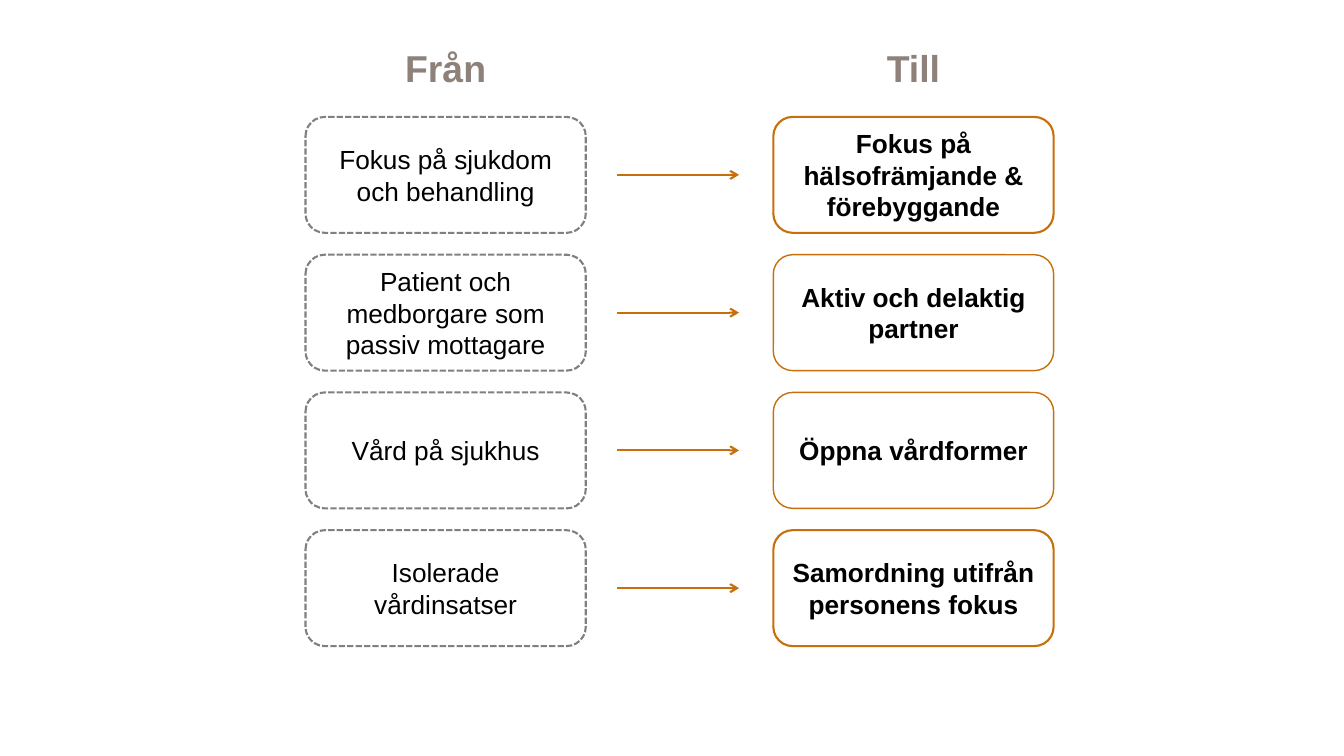
from lxml.etree import SubElement as Sub
from pptx import Presentation
from pptx.dml.color import RGBColor as Rgb
from pptx.enum.dml import MSO_LINE as Dash
from pptx.enum.shapes import MSO_CONNECTOR as Link, MSO_SHAPE as Form
from pptx.enum.text import MSO_ANCHOR as Anchor, PP_ALIGN as Align
from pptx.oxml.ns import qn
from pptx.util import Inches as In, Pt

HUES = {"text": "000000", "fill": "FFFFFF", "from": "808080",
        "to": "C76F0B", "head": "8D8179"}
WIDE, HIGH = 2.78, 1.15
TOP, STEP = 1.16, 4.1 / 3
LEFT, RIGHT = 3.03, 7.67
GAP = 0.31
HEAD_TOP, HEAD_WIDE, HEAD_HIGH = 0.4, 1.72, 0.55

ROWS = [
    ("Fokus på sjukdom och behandling",
     "Fokus på hälsofrämjande & förebyggande", 1.5),
    ("Patient och medborgare som passiv mottagare",
     "Aktiv och delaktig partner", 1),
    ("Vård på sjukhus", "Öppna vårdformer", 1),
    ("Isolerade vårdinsatser", "Samordning utifrån personens fokus", 1.5),
]


def hue(name):
    """Return the named colour."""
    return Rgb.from_string(HUES[name])


def write(shape, text, size, color, bold):
    """Put one centred paragraph in a shape."""
    frame = shape.text_frame
    frame.word_wrap = True
    para = frame.paragraphs[0]
    para.text = text
    para.alignment = Align.CENTER
    font = para.font
    font.name, font.size, font.bold = "Arial", Pt(size), bold
    font.color.rgb = hue(color)


def add_head(slide, left, text):
    """Centre a heading over the column that starts at left."""
    x = left + (WIDE - HEAD_WIDE) / 2
    box = slide.shapes.add_textbox(
        In(x), In(HEAD_TOP), In(HEAD_WIDE), In(HEAD_HIGH))
    write(box, text, 26.7, "head", True)


def add_card(slide, left, top, text, color, width, bold=False, dash=None):
    """Draw one rounded card with its text."""
    card = slide.shapes.add_shape(
        Form.ROUNDED_RECTANGLE, In(left), In(top), In(WIDE), In(HIGH))
    card.shadow.inherit = False
    card.fill.solid()
    card.fill.fore_color.rgb = hue("fill")
    card.line.color.rgb = hue(color)
    card.line.width = Pt(width)
    if dash:
        card.line.dash_style = dash
    frame = card.text_frame
    frame.vertical_anchor = Anchor.MIDDLE
    frame.margin_left = frame.margin_right = In(0.13)
    frame.margin_top = frame.margin_bottom = In(0.07)
    write(card, text, 18.7, "text", bold)


def add_arrow(slide, start, end, y):
    """Draw a level arrow from start to end."""
    arrow = slide.shapes.add_connector(
        Link.STRAIGHT, In(start), In(y), In(end), In(y))
    arrow.line.color.rgb = hue("to")
    arrow.line.width = Pt(1.5)
    Sub(arrow.line._get_or_add_ln(), qn("a:tailEnd"), type="arrow")
    Sub(arrow._element.spPr, qn("a:effectLst"))


def add_row(slide, top, old, new, width):
    """Draw a pair of cards with the arrow between them."""
    add_card(slide, LEFT, top, old, "from", 1.5, dash=Dash.SQUARE_DOT)
    add_card(slide, RIGHT, top, new, "to", width, bold=True)
    add_arrow(slide, LEFT + WIDE + GAP, RIGHT - GAP - 0.03, top + HIGH / 2)


def main():
    """Build and save the slide."""
    deck = Presentation()
    deck.slide_width, deck.slide_height = In(13.33), In(7.5)
    slide = deck.slides.add_slide(deck.slide_layouts[6])
    for i, row in enumerate(ROWS):
        add_row(slide, TOP + i * STEP, *row)
    add_head(slide, LEFT, "Från")
    add_head(slide, RIGHT, "Till")
    deck.save("out.pptx")


if __name__ == "__main__":
    main()
